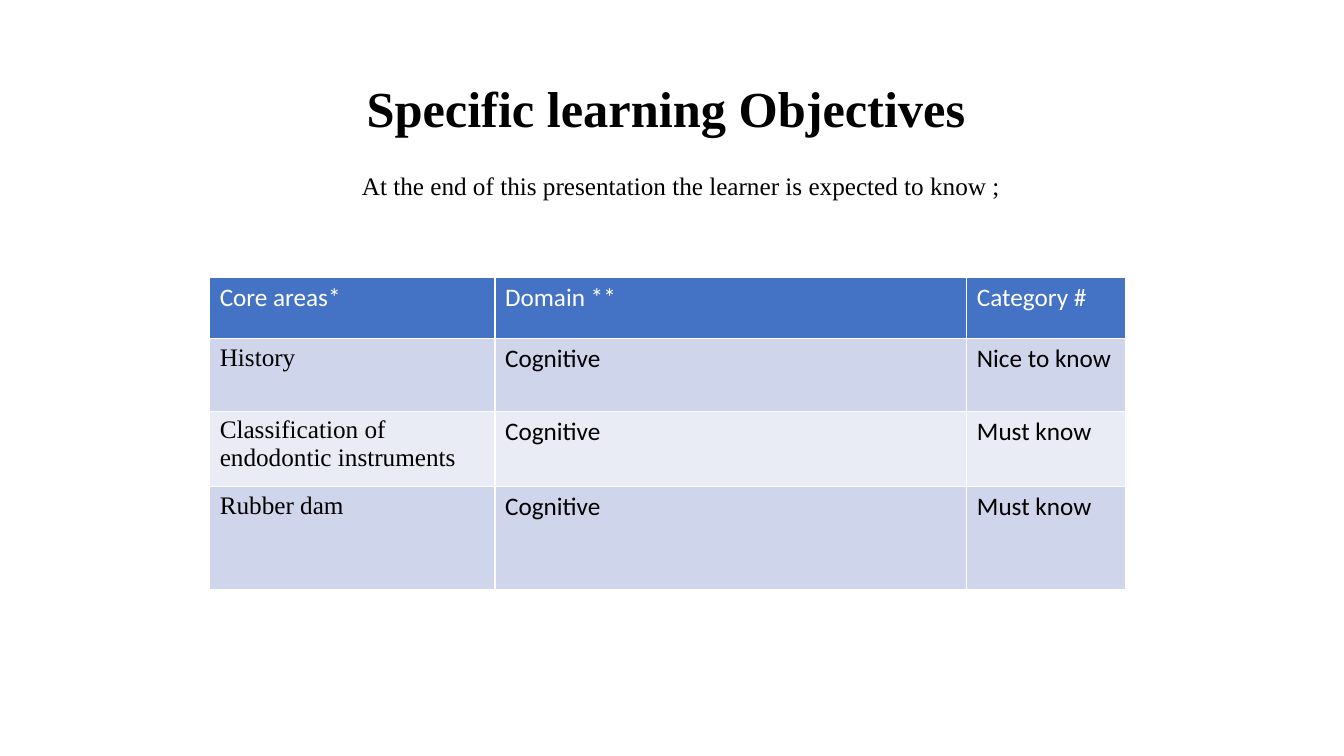
from lxml.etree import SubElement
from pptx import Presentation
from pptx.dml.color import RGBColor
from pptx.enum.text import MSO_ANCHOR as Anchor, PP_ALIGN as Align
from pptx.oxml.ns import qn
from pptx.util import Pt

PX = 9144  # EMU per px, 100 px to the inch
SERIF, SANS = "Times New Roman", "Calibri"
BLACK, WHITE = "000000", "FFFFFF"
HEADER_FILL, BAND_FILLS = "4472C4", ("CFD5EA", "E9EBF5")

COLUMN_WIDTHS = (283, 468, 157)
ROW_HEIGHTS = (61, 72, 75, 102)
OBJECTIVES = (
    ("Core areas*", "Domain **", "Category #"),
    ("History", "Cognitive", "Nice to know"),
    ("Classification of endodontic instruments", "Cognitive", "Must know"),
    ("Rubber dam", "Cognitive", "Must know"),
)


def px(length):
    return length * PX


def color(hex_code):
    return RGBColor.from_string(hex_code)


def write(frame, text, font=SERIF, size=18, ink=BLACK, bold=False,
          align=Align.LEFT, spacing=1.0):
    para = frame.paragraphs[0]
    para.alignment = align
    para.line_spacing = spacing
    span = para.add_run()
    span.text = text
    span.font.name = font
    span.font.size = Pt(size)
    span.font.bold = bold
    span.font.color.rgb = color(ink)


def add_text(page, left, top, width, height, text, anchor=Anchor.TOP, **style):
    box = page.shapes.add_textbox(px(left), px(top), px(width), px(height))
    frame = box.text_frame
    frame.word_wrap = True
    frame.vertical_anchor = anchor
    write(frame, text, align=Align.CENTER, spacing=0.9, **style)


def fill_cell(cell, hex_code):
    cell.fill.solid()
    cell.fill.fore_color.rgb = color(hex_code)


def border_cell(cell, hex_code, points):
    properties = cell._tc.get_or_add_tcPr()
    for position, side in enumerate(("a:lnL", "a:lnR", "a:lnT", "a:lnB")):
        line = SubElement(properties, qn(side), w=str(Pt(points)))
        solid = SubElement(line, qn("a:solidFill"))
        SubElement(solid, qn("a:srgbClr"), val=hex_code)
        # Borders must come before the cell's fill
        properties.insert(position, line)


def add_objectives_table(page, left, top):
    table = page.shapes.add_table(
        len(ROW_HEIGHTS), len(COLUMN_WIDTHS), px(left), px(top),
        px(sum(COLUMN_WIDTHS)), px(sum(ROW_HEIGHTS))).table
    for column, width in zip(table.columns, COLUMN_WIDTHS):
        column.width = px(width)
    for row, height in zip(table.rows, ROW_HEIGHTS):
        row.height = px(height)

    for r, texts in enumerate(OBJECTIVES):
        header = r == 0
        for c, text in enumerate(texts):
            cell = table.cell(r, c)
            fill_cell(cell, HEADER_FILL if header else BAND_FILLS[(r - 1) % 2])
            border_cell(cell, WHITE, 1)
            write(cell.text_frame, text,
                  font=SERIF if c == 0 and not header else SANS,
                  ink=WHITE if header else BLACK)


def main():
    deck = Presentation()
    deck.slide_width, deck.slide_height = px(1333), px(750)
    page = deck.slides.add_slide(deck.slide_layouts[6])

    # Heading and lead-in
    add_text(page, 242, 42, 850, 100, "Specific learning Objectives ",
             anchor=Anchor.BOTTOM, size=36, bold=True)
    add_text(page, 242, 167, 867, 517,
             "At the end of this presentation the learner is expected to know ;")

    # Table of objectives
    add_objectives_table(page, 208, 275)

    deck.save("out.pptx")


if __name__ == "__main__":
    main()
